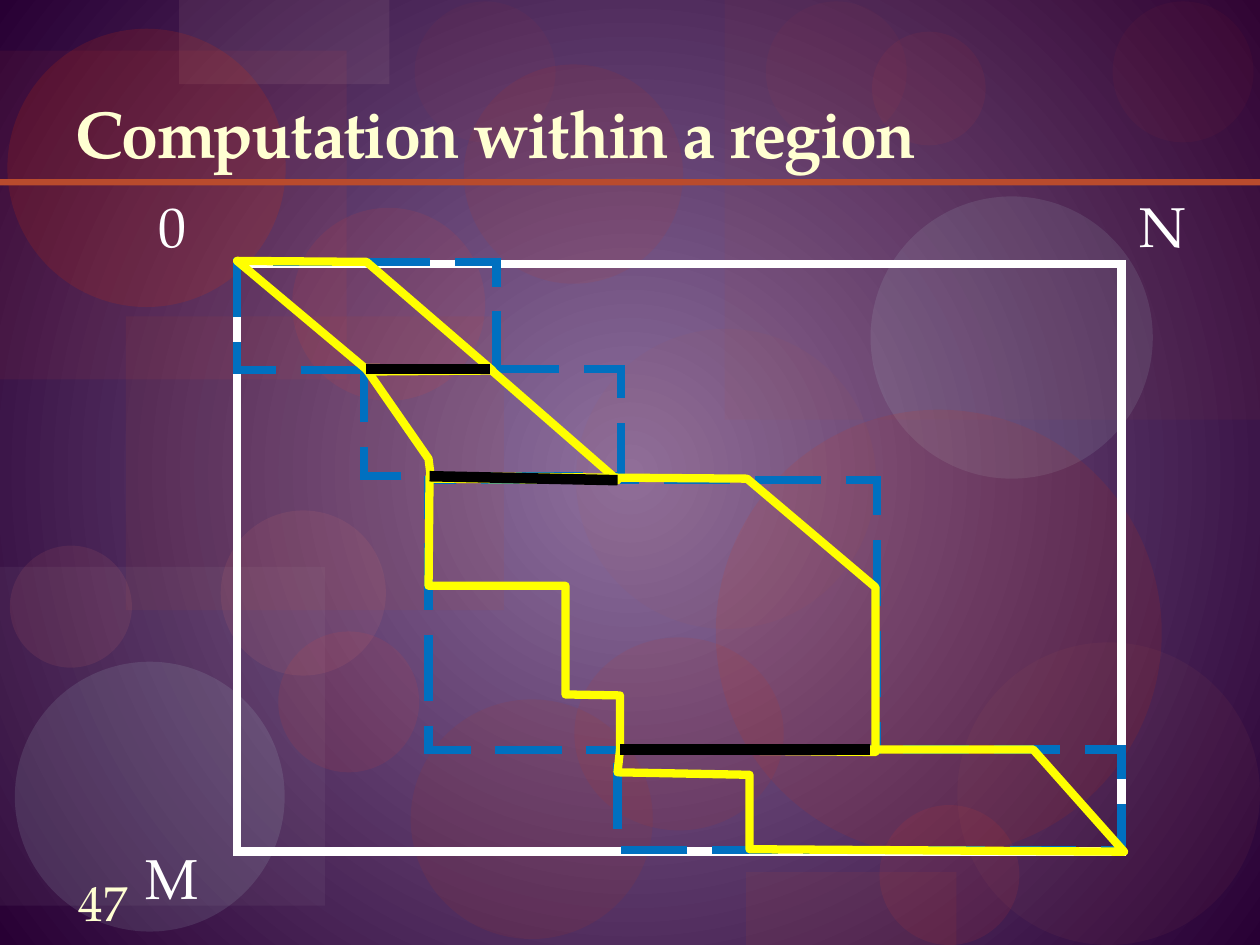
"""Build the slide on computation within a region of a grid."""
from lxml import etree
from pptx import Presentation
from pptx import util as u
from pptx.dml.color import RGBColor
from pptx.enum import dml, shapes, text
from pptx.oxml import ns

FONT = "TeX Gyre Pagella"
WHITE = RGBColor(0xFF, 0xFF, 0xFF)
CREAM = RGBColor(0xFF, 0xFF, 0xD2)
BLUE = RGBColor(0x00, 0x70, 0xC0)
YELLOW = RGBColor(0xFF, 0xFF, 0x00)
BLACK = RGBColor(0x00, 0x00, 0x00)
MAUVE = RGBColor(0x8E, 0x70, 0x9E)
PLUM = RGBColor(0x28, 0x00, 0x34)
RUST = RGBColor(0xB9, 0x4B, 0x2D)
BRICK = RGBColor(0xAA, 0x38, 0x26)
ASH = RGBColor(0xB1, 0xAC, 0xB4)
CLAY = RGBColor(0xAF, 0x5D, 0x53)
RED = RGBColor(0xFF, 0x44, 0x27)
MINT = RGBColor(0xC1, 0xE8, 0xE4)
FLAME = RGBColor(0xE6, 0x31, 0x00)
CORAL = RGBColor(0xF0, 0x4F, 0x36)
BLUSH = RGBColor(0xD9, 0xB2, 0xAD)
ROSE = RGBColor(0xED, 0x7E, 0x70)

RECT = shapes.MSO_SHAPE.RECTANGLE
OVAL = shapes.MSO_SHAPE.OVAL
THICK = 4.72

DECOR = [
    (RECT, 1, 2.51, 3, 2.33, RUST, 9),
    (OVAL, 3.26, 5.55, 1.92, 1.9, BRICK, 13),
    (RECT, 5.75, 0, 4.25, 3.33, RUST, 6),
    (RECT, 0, 4.5, 2.58, 2.69, ASH, 8),
    (OVAL, 4.57, 2.61, 2.38, 2.38, CLAY, 8),
    (OVAL, 6.98, 6.39, 1.11, 1.11, RED, 9),
    (OVAL, 6.91, 1.56, 2.24, 2.24, MINT, 11),
    (OVAL, 0.12, 5.25, 2.14, 2.14, MINT, 12),
    (OVAL, 2.21, 5.01, 1.12, 1.12, RED, 9),
    (OVAL, 4.56, 5.06, 1.66, 1.53, FLAME, 8),
    (RECT, 0, 0.4, 2.75, 2.61, CORAL, 7),
    (RECT, 1.42, 0, 1.67, 0.67, BLUSH, 10),
    (OVAL, 0.06, 0.23, 2.21, 2.21, FLAME, 15),
    (OVAL, 0.08, 4.33, 0.97, 0.97, ROSE, 10),
    (OVAL, 2.32, 1.65, 1.53, 1.53, RED, 9),
    (OVAL, 3.68, 0.51, 1.74, 1.74, FLAME, 8),
    (OVAL, 5.68, 3.25, 3.54, 3.54, FLAME, 10),
    (OVAL, 6.08, 0.01, 1.12, 1.12, RED, 4),
    (OVAL, 7.6, 5.1, 2.4, 2.4, CLAY, 8),
    (OVAL, 1.75, 4.05, 1.31, 1.31, ROSE, 10),
    (OVAL, 6.92, 0.25, 0.9, 0.9, RED, 6),
    (OVAL, 8.83, 0.01, 1.12, 1.12, RED, 4),
    (RECT, 5.92, 6.92, 1.67, 0.58, RUST, 10),
    (OVAL, 3.29, 0.01, 1.12, 1.12, RED, 4),
    (RECT, 0, 1.42, 10, 0.05, RUST, 100),
]
TITLE = "Computation within a region"
LABELS = [("0", 1.16, 1.47), ("N", 8.95, 1.47), ("M", 1.06, 6.64)]
GRID = (1.88, 2.1, 7.02, 4.66)
BOXES = [
    (2.89, 2.93, 2.04, 0.85),
    (3.4, 3.81, 3.56, 2.14),
    (1.88, 2.08, 2.06, 0.86),
    (4.9, 5.95, 4, 0.8),
]
ZONES = [
    [(1.88, 2.07), (2.91, 2.08), (3.91, 2.94), (2.93, 2.95)],
    [(2.9, 2.92), (3.4, 3.64), (3.42, 3.8), (4.9, 3.81), (3.89, 2.93)],
    [(3.41, 3.78), (3.4, 4.65), (4.49, 4.65), (4.49, 5.51), (4.92, 5.52),
     (4.92, 5.95), (6.95, 5.97), (6.95, 4.66), (5.93, 3.8)],
    [(4.92, 5.95), (4.9, 6.13), (5.95, 6.15), (5.95, 6.74), (8.92, 6.76),
     (8.2, 5.95)],
]
CUTS = [(2.9, 2.93, 3.89, 2.93), (3.41, 3.78, 4.9, 3.81), (4.92, 5.95, 6.9, 5.95)]


def size(*inches):
    return [u.Cm(round(n * 2.54, 2)) for n in inches]


def paint(slide):
    fill = slide.background.fill
    fill.gradient()
    for stop, color in zip(fill.gradient_stops, (MAUVE, PLUM)):
        stop.color.rgb = color
    grad = slide._element.xpath(".//p:bg//a:gradFill")[0]
    for lin in grad.findall(ns.qn("a:lin")):
        grad.remove(lin)
    ring = etree.SubElement(grad, ns.qn("a:path"), path="circle")
    etree.SubElement(ring, ns.qn("a:fillToRect"), l="50000", t="50000", r="50000", b="50000")


def add_decor(slide, kind, left, top, wide, high, color, alpha):
    shape = slide.shapes.add_shape(kind, *size(left, top, wide, high))
    shape.shadow.inherit = False
    shape.line.fill.background()
    shape.fill.solid()
    shape.fill.fore_color.rgb = color
    if alpha < 100:
        tone = shape._element.spPr.xpath("./a:solidFill/a:srgbClr")[0]
        etree.SubElement(tone, ns.qn("a:alpha"), val=str(alpha * 1000))


def outline(shape, color):
    shape.shadow.inherit = False
    shape.fill.background()
    shape.line.color.rgb = color
    shape.line.width = u.Pt(THICK)


def add_box(slide, place, color, dash=None):
    shape = slide.shapes.add_shape(RECT, *size(*place))
    outline(shape, color)
    if dash:
        shape.line.dash_style = dash
    edge = shape._element.spPr.find(ns.qn("a:ln"))
    etree.SubElement(edge, ns.qn("a:miter"), lim="800000")


def add_zone(slide, points):
    first, *rest = [size(*point) for point in points]
    pen = slide.shapes.build_freeform(*first)
    pen.add_line_segments(rest, close=True)
    outline(pen.convert_to_shape(), YELLOW)


def add_cut(slide, ends):
    line = slide.shapes.add_connector(shapes.MSO_CONNECTOR.STRAIGHT, *size(*ends))
    line.line.color.rgb = BLACK
    line.line.width = u.Pt(6)
    etree.SubElement(line._element.spPr, ns.qn("a:effectLst"))


def style(para, points, color):
    para.font.name = FONT
    para.font.size = u.Pt(points)
    para.font.color.rgb = color


def add_text(slide, words, place, points, color):
    frame = slide.shapes.add_textbox(*size(*place)).text_frame
    frame.word_wrap = True
    frame.text = words
    style(frame.paragraphs[0], points, color)
    return frame


def add_title(slide):
    title = slide.shapes.title
    title.left, title.top, title.width, title.height = size(0.5, 0.17, 9, 1.25)
    frame = title.text_frame
    frame.text = TITLE
    frame.vertical_anchor = text.MSO_ANCHOR.BOTTOM
    para = frame.paragraphs[0]
    para.alignment = text.PP_ALIGN.LEFT
    style(para, 38, CREAM)
    para.font.bold = True
    para.runs[0].font._element.set("spc", "-100")
    slide.shapes._spTree.append(title._element)


def add_page(slide):
    frame = add_text(slide, "47", (0.17, 6.91, 1.3, 0.5), 28, CREAM)
    frame.margin_left = frame.margin_right = frame.margin_top = frame.margin_bottom = 0
    frame.vertical_anchor = text.MSO_ANCHOR.MIDDLE
    frame.paragraphs[0].alignment = text.PP_ALIGN.CENTER


def main():
    deck = Presentation()
    deck.slide_width, deck.slide_height = size(10, 7.5)
    slide = deck.slides.add_slide(deck.slide_layouts[5])
    paint(slide)
    for item in DECOR:
        add_decor(slide, *item)
    add_title(slide)
    add_page(slide)
    add_box(slide, GRID, WHITE)
    for words, left, top in LABELS:
        add_text(slide, words, (left, top, 0.46, 0.7), 32, WHITE)
    for place in BOXES:
        add_box(slide, place, BLUE, dml.MSO_LINE.LONG_DASH)
    for points in ZONES:
        add_zone(slide, points)
    for ends in CUTS:
        add_cut(slide, ends)
    deck.save("out.pptx")


if __name__ == "__main__":
    main()
